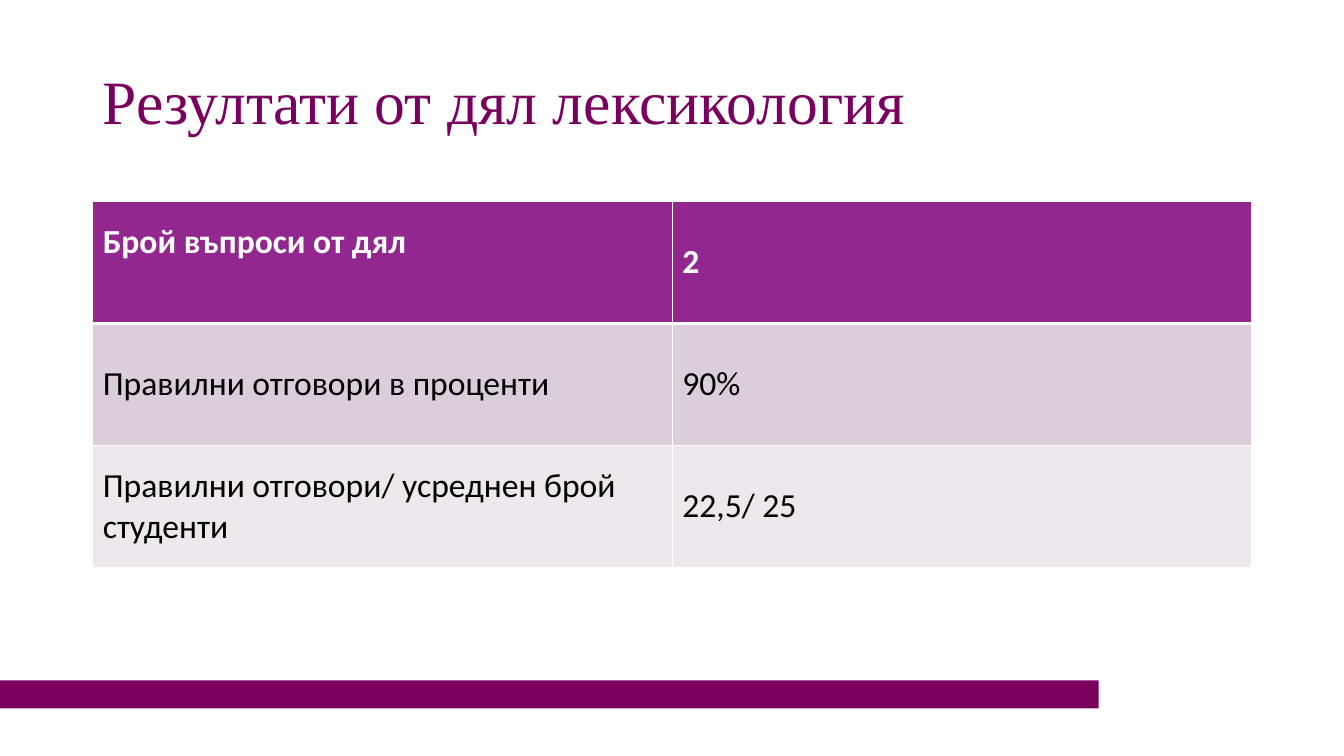
from dataclasses import dataclass

from lxml import etree
from pptx import Presentation
from pptx.dml.color import RGBColor
from pptx.enum import shapes, text
from pptx.oxml import ns
from pptx.table import _Cell
from pptx.text.text import TextFrame
from pptx.util import Length, Pt

PLUM = RGBColor(0x7A, 0x00, 0x5E)
TITLE_PLUM = RGBColor(0x7A, 0x00, 0x5F)
PURPLE = RGBColor(0x92, 0x27, 0x8F)
LILAC = RGBColor(0xDC, 0xCD, 0xDB)
PALE_LILAC = RGBColor(0xEE, 0xE8, 0xEE)
WHITE = RGBColor(0xFF, 0xFF, 0xFF)
BLACK = RGBColor(0x00, 0x00, 0x00)

LEFT, CONTENT_WIDTH = Pt(66.24), Pt(828)
TABLE_TOP, ROW_HEIGHT = Pt(144), Pt(87.12)


@dataclass(frozen=True)
class ResultRow:
    label: str
    value: str
    fill: RGBColor
    color: RGBColor = BLACK
    bold: bool = False
    top_line: Length = Pt(1)
    bottom_line: Length = Pt(1)
    label_bottom_margin: Length = Pt(3.6)


ROWS = [
    ResultRow("Брой въпроси от дял", "2", PURPLE, WHITE, bold=True,
              bottom_line=Pt(3), label_bottom_margin=Pt(32.4)),
    ResultRow("Правилни отговори в проценти", "90%", LILAC, top_line=Pt(3)),
    ResultRow("Правилни отговори/ усреднен брой студенти", "22,5/ 25", PALE_LILAC),
]


def write(tf: TextFrame, content: str, *, size: Length, color: RGBColor,
          font: str = "Calibri", bold: bool = False,
          align: text.PP_ALIGN = text.PP_ALIGN.LEFT, spacing: float = 1.0) -> None:
    tf.word_wrap = True
    p = tf.paragraphs[0]
    p.alignment = align
    p.line_spacing = spacing
    r = p.add_run()
    r.text = content
    r.font.name = font
    r.font.size = size
    r.font.bold = bold
    r.font.color.rgb = color


def add_borders(cell: _Cell, top: Length, bottom: Length) -> None:
    """Draw white cell borders; call before filling the cell."""
    tc_pr = cell._tc.get_or_add_tcPr()
    for side, width in (("L", Pt(1)), ("R", Pt(1)), ("T", top), ("B", bottom)):
        ln = etree.SubElement(tc_pr, ns.qn(f"a:ln{side}"), w=str(int(width)))
        fill = etree.SubElement(ln, ns.qn("a:solidFill"))
        etree.SubElement(fill, ns.qn("a:srgbClr"), val=str(WHITE))


def add_results_table(s) -> None:
    table = s.shapes.add_table(len(ROWS), 2, LEFT, TABLE_TOP, CONTENT_WIDTH,
                               ROW_HEIGHT * len(ROWS)).table
    for i, row in enumerate(ROWS):
        table.rows[i].height = ROW_HEIGHT
        for j, content in enumerate((row.label, row.value)):
            cell = table.cell(i, j)
            add_borders(cell, row.top_line, row.bottom_line)
            cell.fill.solid()
            cell.fill.fore_color.rgb = row.fill
            cell.vertical_anchor = text.MSO_ANCHOR.MIDDLE
            write(cell.text_frame, content, size=Pt(24), color=row.color, bold=row.bold)
        table.cell(i, 0).margin_bottom = row.label_bottom_margin


def add_footer_bar(s) -> None:
    bar = s.shapes.add_shape(shapes.MSO_SHAPE.RECTANGLE, Pt(0), Pt(486), Pt(784.8), Pt(20))
    bar.shadow.inherit = False
    bar.fill.solid()
    bar.fill.fore_color.rgb = PLUM
    bar.line.fill.background()


def add_title(s) -> None:
    title = s.shapes.title
    title.left, title.top = LEFT, Pt(22.32)
    title.width, title.height = CONTENT_WIDTH, Pt(104.4)
    tf = title.text_frame
    tf.auto_size = text.MSO_AUTO_SIZE.NONE
    tf.vertical_anchor = text.MSO_ANCHOR.MIDDLE
    write(tf, "Резултати от дял лексикология", size=Pt(44), color=TITLE_PLUM,
          font="Times New Roman", align=text.PP_ALIGN.JUSTIFY, spacing=0.9)


def main() -> None:
    prs = Presentation()
    prs.slide_width, prs.slide_height = Pt(960), Pt(540)
    s = prs.slides.add_slide(prs.slide_layouts.get_by_name("Title Only"))
    add_footer_bar(s)
    add_title(s)
    add_results_table(s)
    prs.save("out.pptx")


if __name__ == "__main__":
    main()
